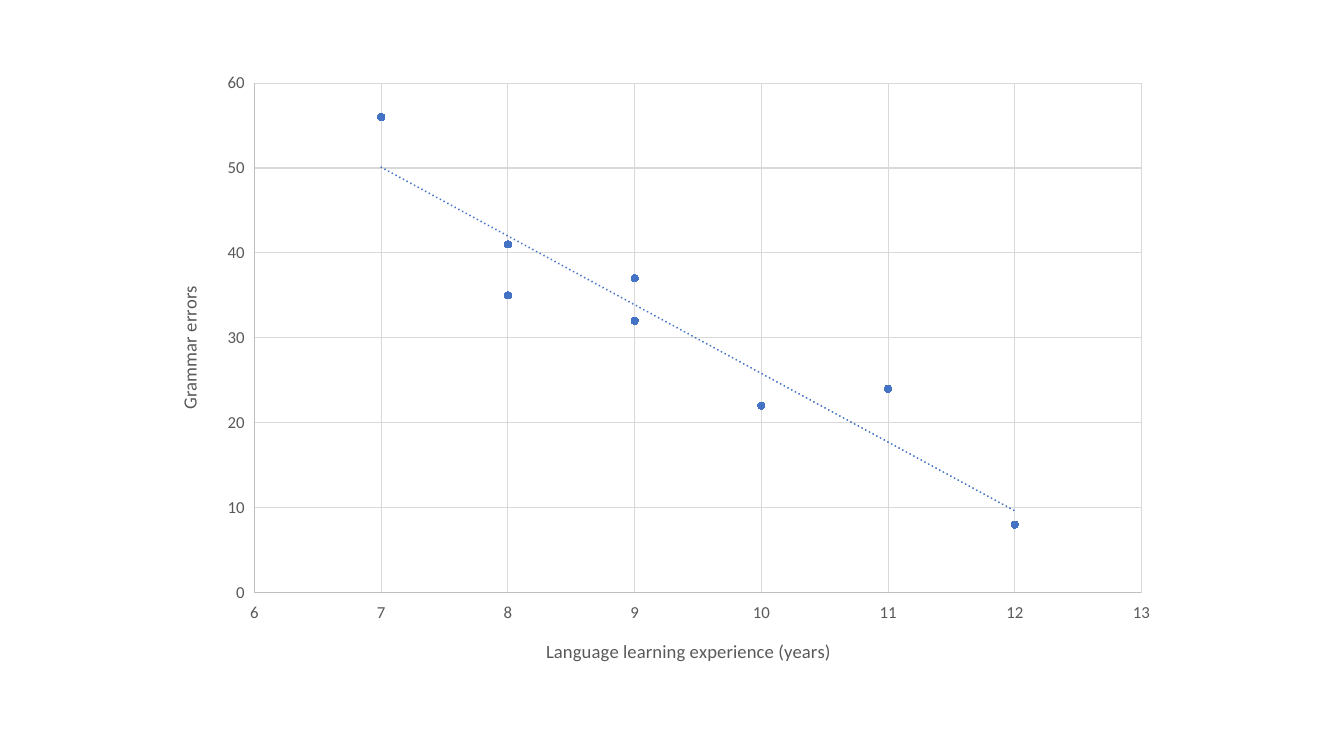
from dataclasses import dataclass

from lxml import etree
from pptx import Presentation
from pptx.chart.data import XyChartData
from pptx.dml.color import RGBColor
from pptx.enum.chart import XL_CHART_TYPE, XL_MARKER_STYLE, XL_TICK_LABEL_POSITION, XL_TICK_MARK
from pptx.oxml import parse_xml
from pptx.oxml.ns import nsdecls, qn
from pptx.util import Inches, Pt

SCATTER = XL_CHART_TYPE.XY_SCATTER
CIRCLE = XL_MARKER_STYLE.CIRCLE
NO_TICK = XL_TICK_MARK.NONE
LABELS_LOW = XL_TICK_LABEL_POSITION.LOW


@dataclass(frozen=True)
class Theme:
    font: str = "Calibri"
    text: str = "595959"
    axis: str = "BFBFBF"
    grid: str = "D9D9D9"
    accent: str = "4472C4"
    label_size: float = 12
    title_size: float = 13.3
    hairline: float = 0.75
    trend_width: float = 1.5
    marker_size: int = 5


# Content: (years of learning, grammar errors)
LEARNERS = [(9, 37), (12, 8), (7, 56), (10, 22), (8, 35), (11, 24), (9, 32), (8, 41)]
SERIES_NAME = "Series 1"
# Axis: title, minimum, maximum, step, title rotation in degrees
YEARS_AXIS = ("Language learning experience (years)", 6, 13, 1, 0)
ERRORS_AXIS = ("Grammar errors", 0, 60, 10, -90)

# Layout: left, top, width, height as shares of the slide, then of the chart
SLIDE_W, SLIDE_H = Inches(13.33), Inches(7.5)
CHART_BOX = (0.12, 0.08, 0.75, 0.82)
PLOT_BOX = (0.0925, 0.0365, 0.88, 0.822)

THEME = Theme()


def style_font(font, size):
    font.name = THEME.font
    font.size = Pt(size)
    font.bold = False
    font.color.rgb = RGBColor.from_string(THEME.text)


def style_line(line, color):
    line.color.rgb = RGBColor.from_string(color)
    line.width = Pt(THEME.hairline)


def style_axis(axis, title, low, high, step, rotation):
    axis.minimum_scale, axis.maximum_scale, axis.major_unit = low, high, step
    axis.major_tick_mark = axis.minor_tick_mark = NO_TICK
    axis.tick_label_position = LABELS_LOW
    axis.tick_labels.number_format = "General"
    axis.tick_labels.number_format_is_linked = False
    style_font(axis.tick_labels.font, THEME.label_size)
    style_line(axis.format.line, THEME.axis)
    axis.has_major_gridlines = True
    style_line(axis.major_gridlines.format.line, THEME.grid)

    tf = axis.axis_title.text_frame
    r = tf.paragraphs[0].add_run()
    r.text = title
    style_font(r.font, THEME.title_size)
    body = axis.axis_title._element.find(".//" + qn("a:bodyPr"))
    body.set("rot", str(rotation * 60000))
    body.set("vert", "horz")


def add_trendline(series):
    trend = parse_xml(
        f'<c:trendline {nsdecls("c", "a")}><c:spPr>'
        f'<a:ln w="{Pt(THEME.trend_width)}" cap="rnd"><a:solidFill>'
        f'<a:srgbClr val="{THEME.accent}"/></a:solidFill>'
        '<a:prstDash val="sysDot"/></a:ln></c:spPr>'
        '<c:trendlineType val="linear"/><c:dispRSqr val="0"/>'
        '<c:dispEq val="0"/></c:trendline>')
    series._element.find(qn("c:xVal")).addprevious(trend)


def place_plot(chart, box):
    plot_area = chart._chartSpace.find(".//" + qn("c:plotArea"))
    layout = plot_area.find(qn("c:layout"))
    if layout is None:
        layout = etree.Element(qn("c:layout"))
        plot_area.insert(0, layout)
    manual = etree.SubElement(layout, qn("c:manualLayout"))
    settings = [("layoutTarget", "inner"), ("xMode", "edge"), ("yMode", "edge")]
    settings += zip("xywh", box)
    for name, value in settings:
        etree.SubElement(manual, qn(f"c:{name}")).set("val", str(value))


def add_scatter(slide):
    data = XyChartData()
    points = data.add_series(SERIES_NAME)
    for years, errors in LEARNERS:
        points.add_data_point(years, errors)
    left, top, width, height = CHART_BOX
    chart = slide.shapes.add_chart(
        SCATTER, int(left * SLIDE_W), int(top * SLIDE_H),
        int(width * SLIDE_W), int(height * SLIDE_H), data).chart
    chart.has_title = chart.has_legend = False
    style_font(chart.font, THEME.label_size)

    # Axes and plot area
    style_axis(chart.category_axis, *YEARS_AXIS)
    style_axis(chart.value_axis, *ERRORS_AXIS)
    place_plot(chart, PLOT_BOX)

    # Markers and trend
    plot = chart.plots[0]
    plot.vary_by_categories = False
    series = plot.series[0]
    series.format.line.fill.background()
    series.smooth = False
    marker = series.marker
    marker.style, marker.size = CIRCLE, THEME.marker_size
    marker.format.fill.solid()
    marker.format.fill.fore_color.rgb = RGBColor.from_string(THEME.accent)
    style_line(marker.format.line, THEME.accent)
    add_trendline(series)


def main():
    prs = Presentation()
    prs.slide_width, prs.slide_height = SLIDE_W, SLIDE_H
    slide = prs.slides.add_slide(prs.slide_layouts[6])
    add_scatter(slide)
    prs.save("out.pptx")


if __name__ == "__main__":
    main()
